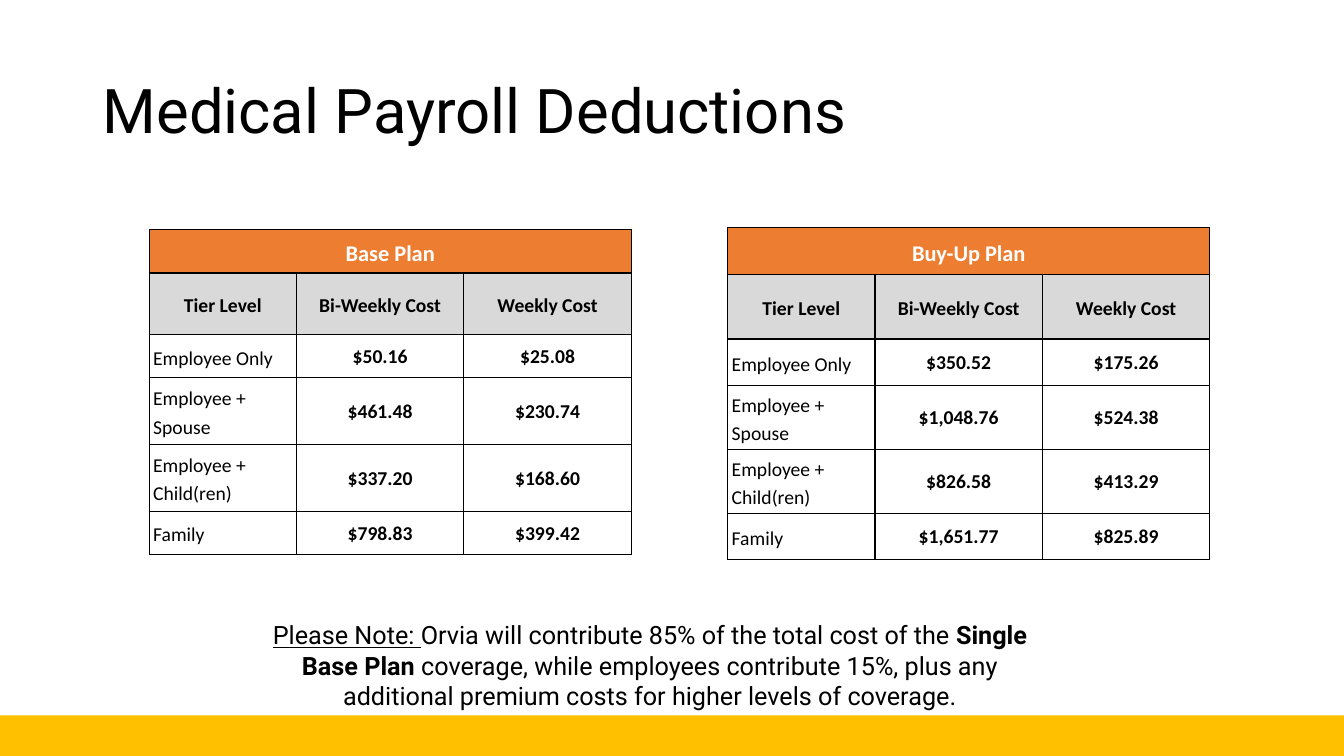
from dataclasses import dataclass

import pptx
import pptx.dml.color
import pptx.enum.shapes
import pptx.enum.text
import pptx.oxml
import pptx.oxml.ns
import pptx.shapes.autoshape
import pptx.slide
import pptx.table
import pptx.util
from pptx.util import Cm

BLACK = pptx.dml.color.RGBColor(0x00, 0x00, 0x00)
WHITE = pptx.dml.color.RGBColor(0xFF, 0xFF, 0xFF)
ORANGE = pptx.dml.color.RGBColor(0xED, 0x7D, 0x31)
GRAY = pptx.dml.color.RGBColor(0xD9, 0xD9, 0xD9)
GOLD = pptx.dml.color.RGBColor(0xFF, 0xC0, 0x00)

SLIDE_WIDTH, SLIDE_HEIGHT = 33.87, 19.05
FOOTER_HEIGHT = 1.02
COLUMN_WIDTHS = (3.71, 4.22, 4.22)
HEADINGS = ("Tier Level", "Bi-Weekly Cost", "Weekly Cost")
TIERS = ("Employee Only", "Employee + Spouse", "Employee + Child(ren)", "Family")
CENTER = pptx.enum.text.PP_ALIGN.CENTER
LEFT = pptx.enum.text.PP_ALIGN.LEFT
MIDDLE = pptx.enum.text.MSO_ANCHOR.MIDDLE


@dataclass(frozen=True)
class CellStyle:
    size: int
    color: pptx.dml.color.RGBColor
    bold: bool
    align: pptx.enum.text.PP_ALIGN
    fill: pptx.dml.color.RGBColor | None = None
    is_cost: bool = False


PLAN_STYLE = CellStyle(16, WHITE, True, CENTER, ORANGE)
HEADING_STYLE = CellStyle(14, BLACK, True, CENTER, GRAY)
TIER_STYLE = CellStyle(14, BLACK, False, LEFT)
COST_STYLE = CellStyle(14, BLACK, True, CENTER, is_cost=True)


@dataclass(frozen=True)
class Plan:
    name: str
    left: float
    top: float
    row_heights: tuple[float, ...]
    costs: tuple[tuple[str, str], ...]


PLANS = (
    Plan("Base Plan", 3.76, 5.79, (1.09, 1.55, 1.09, 1.68, 1.68, 1.09),
         (("$50.16", "$25.08"), ("$461.48", "$230.74"),
          ("$337.20", "$168.60"), ("$798.83", "$399.42"))),
    Plan("Buy-Up Plan", 18.34, 5.74, (1.17, 1.63, 1.17, 1.45, 1.45, 1.17),
         (("$350.52", "$175.26"), ("$1,048.76", "$524.38"),
          ("$826.58", "$413.29"), ("$1,651.77", "$825.89"))),
)


@dataclass(frozen=True)
class NotePart:
    text: str
    bold: bool = False
    underline: bool = False


NOTE = (
    NotePart("Please Note: ", underline=True),
    NotePart("Orvia will contribute 85% of the total cost of the "),
    NotePart("Single Base Plan ", bold=True),
    NotePart("coverage, while employees contribute 15%, plus any "
             "additional premium costs for higher levels of coverage."),
)


def add_borders(cell: pptx.table._Cell) -> None:
    properties = cell._tc.get_or_add_tcPr()
    for index, side in enumerate(("lnL", "lnR", "lnT", "lnB")):
        properties.insert(index, pptx.oxml.parse_xml(
            f'<a:{side} {pptx.oxml.ns.nsdecls("a")} w="12700"><a:solidFill>'
            f'<a:srgbClr val="{BLACK}"/></a:solidFill></a:{side}>'))


def format_cell(cell: pptx.table._Cell, style: CellStyle) -> None:
    margin = Cm(0.03 if style.is_cost else 0.1)
    cell.margin_left = cell.margin_right = cell.margin_top = margin
    cell.margin_bottom = Cm(0) if style.is_cost else margin
    cell.vertical_anchor = MIDDLE
    if style.fill is None:
        cell.fill.background()
    else:
        cell.fill.solid()
        cell.fill.fore_color.rgb = style.fill
    add_borders(cell)
    paragraph = cell.text_frame.paragraphs[0]
    paragraph.alignment = style.align
    if not style.is_cost:
        paragraph.line_spacing = 1.19
        paragraph.space_after = pptx.util.Pt(6)
    font = paragraph.font
    font.name, font.size, font.bold = "Calibri", pptx.util.Pt(style.size), style.bold
    font.color.rgb = style.color


def add_plan_table(slide: pptx.slide.Slide, plan: Plan) -> None:
    rows = [(plan.name, "", ""), HEADINGS]
    rows += [(tier, *costs) for tier, costs in zip(TIERS, plan.costs)]
    table = slide.shapes.add_table(
        len(rows), len(HEADINGS), Cm(plan.left), Cm(plan.top),
        Cm(sum(COLUMN_WIDTHS)), Cm(sum(plan.row_heights))).table
    table.first_row = table.horz_banding = False
    for column, width in zip(table.columns, COLUMN_WIDTHS):
        column.width = Cm(width)
    for row, height in zip(table.rows, plan.row_heights):
        row.height = Cm(height)
    table.cell(0, 0).merge(table.cell(0, len(HEADINGS) - 1))
    for row_index, texts in enumerate(rows):
        for column_index, text in enumerate(texts):
            cell = table.cell(row_index, column_index)
            cell.text = text
            if row_index < 2:
                style = (PLAN_STYLE, HEADING_STYLE)[row_index]
            else:
                style = COST_STYLE if column_index else TIER_STYLE
            format_cell(cell, style)


def add_text_box(slide: pptx.slide.Slide, left: float, top: float, width: float,
                 height: float, size: int) -> pptx.shapes.autoshape.Shape:
    """Add an empty wrapping box whose paragraph is black Roboto."""
    box = slide.shapes.add_textbox(Cm(left), Cm(top), Cm(width), Cm(height))
    box.text_frame.word_wrap = True
    font = box.text_frame.paragraphs[0].font
    font.name, font.size = "Roboto", pptx.util.Pt(size)
    font.color.rgb = BLACK
    return box


def add_title(slide: pptx.slide.Slide) -> None:
    title = add_text_box(slide, 2.34, 1.02, 29.21, 3.68, 44)
    title.text_frame.vertical_anchor = MIDDLE
    paragraph = title.text_frame.paragraphs[0]
    paragraph.line_spacing = 0.9
    paragraph.add_run().text = "Medical Payroll Deductions"


def add_footer_band(slide: pptx.slide.Slide) -> None:
    band = slide.shapes.add_shape(
        pptx.enum.shapes.MSO_SHAPE.RECTANGLE, Cm(0), Cm(SLIDE_HEIGHT - FOOTER_HEIGHT),
        Cm(SLIDE_WIDTH), Cm(FOOTER_HEIGHT))
    band.shadow.inherit = False
    band.fill.solid()
    band.fill.fore_color.rgb = GOLD
    band.line.fill.background()


def add_note(slide: pptx.slide.Slide) -> None:
    note = add_text_box(slide, 6.17, 15.49, 20.42, 2.57, 18)
    paragraph = note.text_frame.paragraphs[0]
    paragraph.alignment = CENTER
    for part in NOTE:
        run = paragraph.add_run()
        run.text = part.text
        run.font.bold = part.bold
        run.font.underline = part.underline


def main() -> None:
    presentation = pptx.Presentation()
    presentation.slide_width = Cm(SLIDE_WIDTH)
    presentation.slide_height = Cm(SLIDE_HEIGHT)
    slide = presentation.slides.add_slide(presentation.slide_layouts[6])
    add_title(slide)
    add_footer_band(slide)
    for plan in PLANS:
        add_plan_table(slide, plan)
    add_note(slide)
    presentation.save("out.pptx")


if __name__ == "__main__":
    main()
